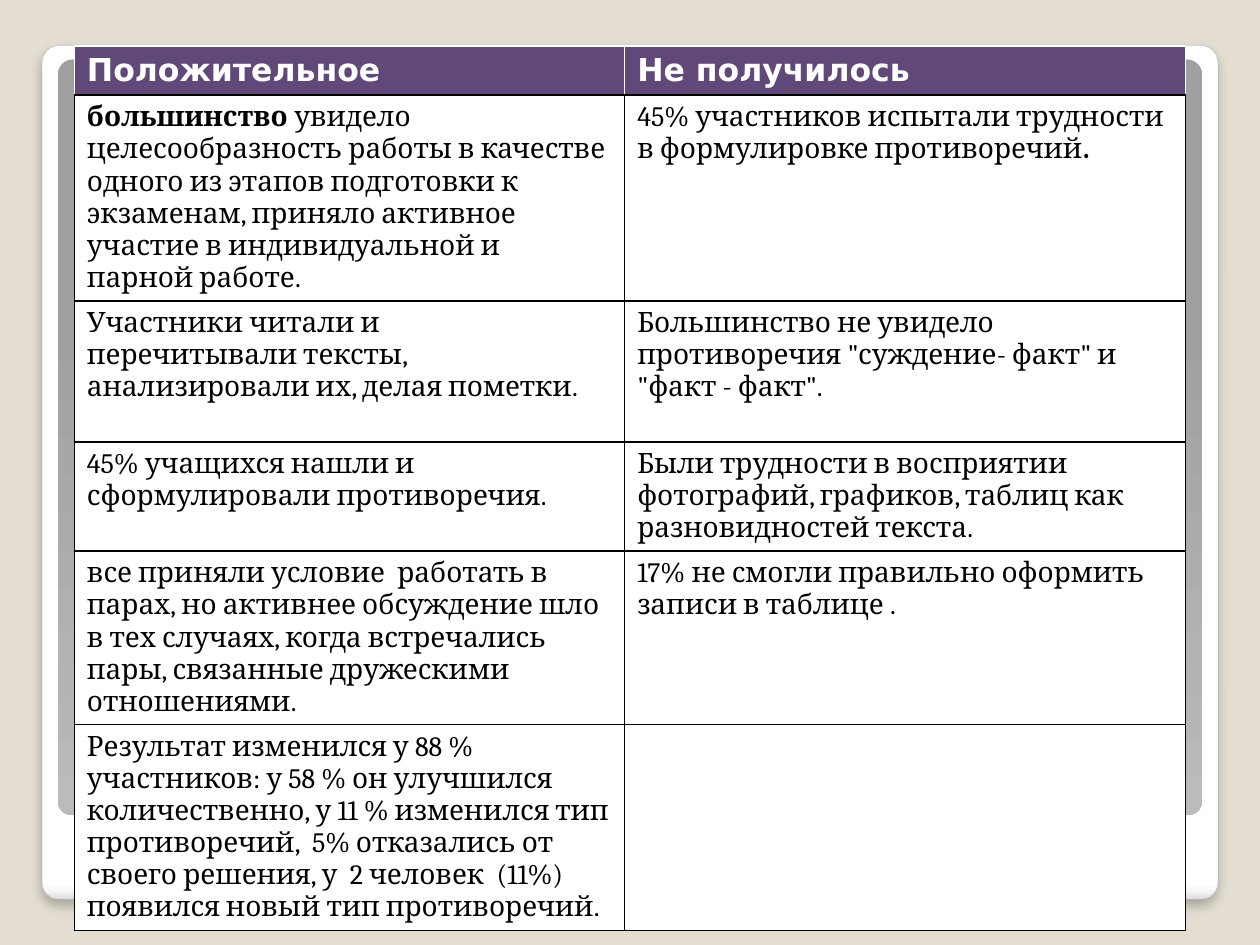
from dataclasses import dataclass

import pptx
import pptx.dml.color
import pptx.enum.shapes
import pptx.oxml
import pptx.oxml.ns
import pptx.util

Pt = pptx.util.Pt
NS = pptx.oxml.ns.nsdecls("a")


@dataclass(frozen=True)
class Theme:
    background: str = "E3DED1"
    white: str = "FFFFFF"
    black: str = "000000"
    card_line: str = "A4A4A4"
    header: str = "604878"
    header_font: str = "DejaVu Sans"
    body_font: str = "Cambria"
    header_size: float = 18
    body_size: float = 16
    border: float = 1


@dataclass(frozen=True)
class Panel:
    left: float
    top: float
    width: float
    height: float
    stops: tuple[tuple[int, str], ...]
    line: str | None = None
    shadow: bool = False


@dataclass(frozen=True)
class Run:
    text: str
    bold: bool = False


@dataclass(frozen=True)
class Row:
    height: float
    positive: tuple[Run, ...]
    negative: tuple[Run, ...] = ()


THEME = Theme()
PANELS = (
    Panel(24, 26, 672, 488,
          ((0, "FFFFFF"), (98, "FFFFFF"), (99, "F7F7F7"), (100, "DADADA")),
          line=THEME.card_line, shadow=True),
    Panel(33, 34, 654, 432, ((0, "A0A0A0"), (40, "A2A2A2"), (100, "BBBBBB"))),
)
TABLE_LEFT, TABLE_TOP = 42.5, 26.3
COLUMNS = (314.5, 320.5)
ROWS = (
    Row(28, (Run("Положительное", True),), (Run("Не получилось", True),)),
    Row(117.4,
        (Run("большинство", True),
         Run(" увидело целесообразность работы в качестве одного из этапов подготовки "
             "к экзаменам, приняло активное участие в индивидуальной и парной работе.")),
        (Run("45% участников испытали трудности в формулировке противоречий"),
         Run(".", True))),
    Row(80.8,
        (Run("Участники читали и\vперечитывали тексты, анализировали их, делая пометки."),),
        (Run('Большинство не увидело противоречия "суждение- факт" и "факт - факт".'),)),
    Row(62.3,
        (Run("45% учащихся нашли и сформулировали противоречия."),),
        (Run("Были трудности в восприятии фотографий, графиков, таблиц как "
             "разновидностей текста."),)),
    Row(99,
        (Run("все приняли условие  работать в парах, но активнее обсуждение шло в тех "
             "случаях, когда встречались пары, связанные дружескими отношениями."),),
        (Run("17% не смогли правильно оформить записи в таблице ."),)),
    Row(117.6,
        (Run("Результат изменился у 88 % участников: у 58 % он улучшился количественно, "
             "у 11 % изменился тип противоречий,  5% отказались от своего решения, "
             "у  2 человек  (11%) появился новый тип противоречий."),)),
)


def rgb(value: str) -> pptx.dml.color.RGBColor:
    return pptx.dml.color.RGBColor.from_string(value)


def add_text(p, text: str, *, font: str, size: float, color: str, bold: bool = False) -> None:
    """Append formatted text to a paragraph; a vertical tab is a line break."""
    for i, line in enumerate(text.split("\v")):
        if i:
            p.add_line_break()
        r = p.add_run()
        r.text = line
        r.font.name = font
        r.font.size = Pt(size)
        r.font.bold = bold
        r.font.color.rgb = rgb(color)


def set_gradient(sp, stops: tuple[tuple[int, str], ...]) -> None:
    """Fill a shape from top to bottom with stops given in percent."""
    sp.fill.gradient()
    sp.fill.gradient_angle = 270
    gs_list = sp._element.spPr.find(".//" + pptx.oxml.ns.qn("a:gsLst"))
    for gs in list(gs_list):
        gs_list.remove(gs)
    for position, color in stops:
        gs_list.append(pptx.oxml.parse_xml(
            f'<a:gs {NS} pos="{position * 1000}"><a:srgbClr val="{color}"/></a:gs>'))


def add_panel(s, panel: Panel) -> None:
    sp = s.shapes.add_shape(
        pptx.enum.shapes.MSO_SHAPE.ROUNDED_RECTANGLE,
        Pt(panel.left), Pt(panel.top), Pt(panel.width), Pt(panel.height))
    sp.adjustments[0] = 0.02
    set_gradient(sp, panel.stops)
    if panel.line:
        sp.line.color.rgb = rgb(panel.line)
        sp.line.width = Pt(0.16)
    else:
        sp.line.fill.background()
    sp.shadow.inherit = False
    if panel.shadow:
        effects = sp._element.spPr.find(pptx.oxml.ns.qn("a:effectLst"))
        effects.append(pptx.oxml.parse_xml(
            f'<a:outerShdw {NS} blurRad="{Pt(6)}" dist="{Pt(4)}" dir="5400000" '
            f'algn="tl" rotWithShape="0"><a:srgbClr val="{THEME.black}">'
            '<a:alpha val="25000"/></a:srgbClr></a:outerShdw>'))


def set_borders(cell, **colors: str) -> None:
    """Draw the borders named L, R, T and B, given in that order."""
    tc_pr = cell._tc.get_or_add_tcPr()
    for i, (side, color) in enumerate(colors.items()):
        tc_pr.insert(i, pptx.oxml.parse_xml(
            f'<a:ln{side} {NS} w="{Pt(THEME.border)}"><a:solidFill>'
            f'<a:srgbClr val="{color}"/></a:solidFill></a:ln{side}>'))


def fill_cell(cell, runs: tuple[Run, ...], header: bool) -> None:
    cell.fill.solid()
    cell.fill.fore_color.rgb = rgb(THEME.header if header else THEME.white)
    edge = THEME.white if header else THEME.black
    set_borders(cell, L=edge, R=edge, T=edge, B=THEME.black)
    p = cell.text_frame.paragraphs[0]
    for run in runs:
        add_text(p, run.text, bold=run.bold,
                 font=THEME.header_font if header else THEME.body_font,
                 size=THEME.header_size if header else THEME.body_size,
                 color=THEME.white if header else THEME.black)


def add_results_table(s, rows: tuple[Row, ...]) -> None:
    table = s.shapes.add_table(
        len(rows), len(COLUMNS), Pt(TABLE_LEFT), Pt(TABLE_TOP),
        Pt(sum(COLUMNS)), Pt(sum(row.height for row in rows))).table
    table.horz_banding = False
    for column, width in zip(table.columns, COLUMNS):
        column.width = Pt(width)
    for i, row in enumerate(rows):
        table.rows[i].height = Pt(row.height)
        for j, runs in enumerate((row.positive, row.negative)):
            fill_cell(table.cell(i, j), runs, header=i == 0)


def main() -> None:
    prs = pptx.Presentation()
    prs.slide_width, prs.slide_height = Pt(720), Pt(540)
    s = prs.slides.add_slide(prs.slide_layouts[6])
    s.background.fill.solid()
    s.background.fill.fore_color.rgb = rgb(THEME.background)
    for panel in PANELS:
        add_panel(s, panel)
    add_results_table(s, ROWS)
    prs.save("out.pptx")


if __name__ == "__main__":
    main()
